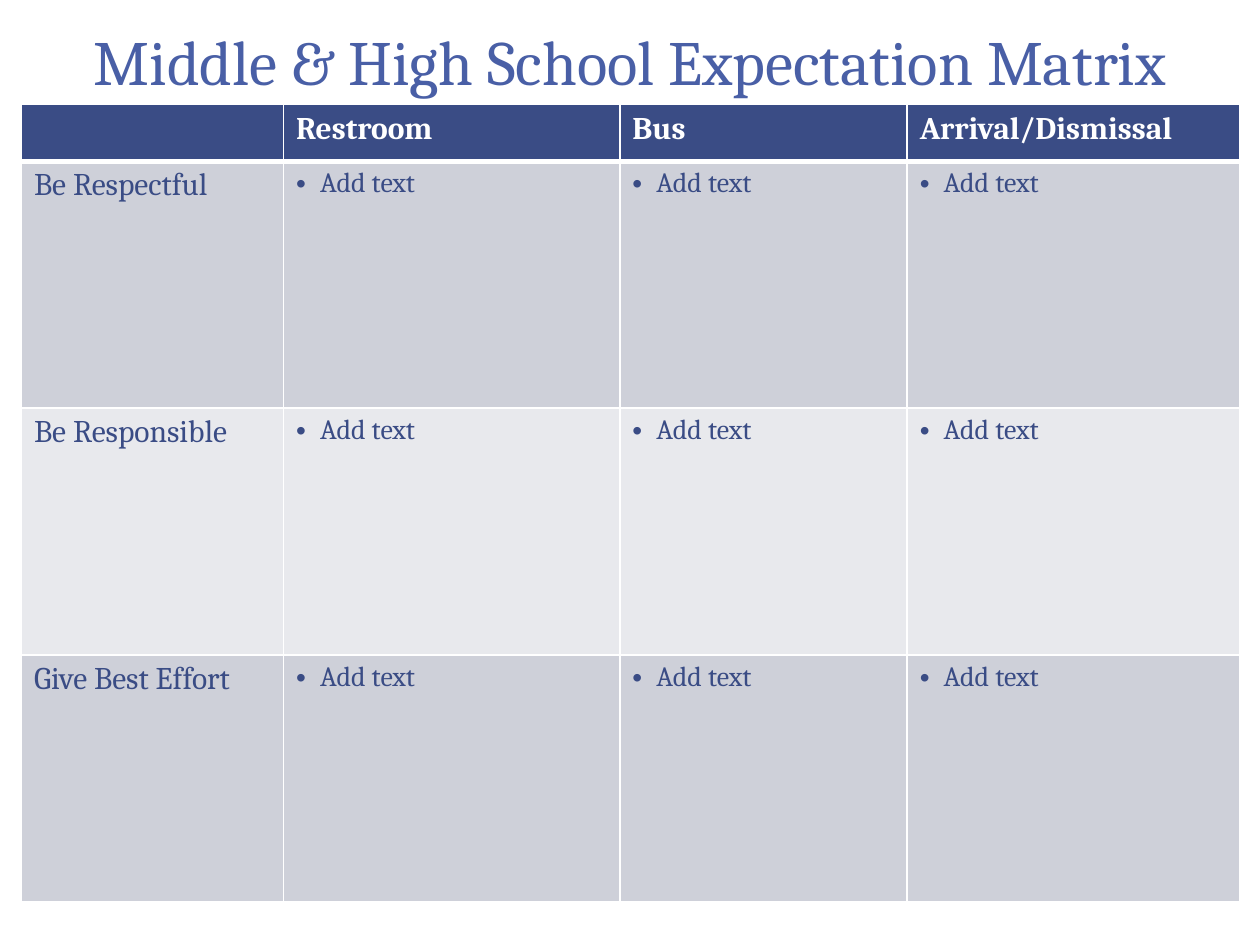
from dataclasses import dataclass

from lxml import etree
from pptx import Presentation
from pptx.dml.color import RGBColor
from pptx.enum.text import MSO_ANCHOR, PP_ALIGN
from pptx.oxml.ns import qn
from pptx.util import Inches, Pt

CENTER = PP_ALIGN.CENTER
LEFT = PP_ALIGN.LEFT
TOP = MSO_ANCHOR.TOP


@dataclass(frozen=True)
class Theme:
    font: str = "Cambria"
    title: str = "495FA6"
    navy: str = "3A4C85"
    white: str = "FFFFFF"
    bands: tuple = ("CED0D9", "E8E9ED")
    title_size: int = 36
    label_size: int = 18
    body_size: int = 16
    rule: int = 1
    header_rule: int = 3


THEME = Theme()

SETTINGS = ["Restroom", "Bus", "Arrival/Dismissal"]
EXPECTATIONS = ["Be Respectful", "Be Responsible", "Give Best Effort"]
PROMPT = "Add text"
COLUMN_WIDTHS = [2.08, 2.67, 2.28, 2.64]
HEADER_HEIGHT = 0.45
BULLET_INDENT = 0.19


def write_text(frame, text, *, size, color, bold=False, align=LEFT, bullet=False):
    paragraph = frame.paragraphs[0]
    paragraph.alignment = align
    if bullet:
        properties = paragraph._p.get_or_add_pPr()
        properties.set("marL", str(Inches(BULLET_INDENT)))
        properties.set("indent", str(-Inches(BULLET_INDENT)))
        etree.SubElement(properties, qn("a:buFont"), typeface="Arial")
        etree.SubElement(properties, qn("a:buChar"), char="•")
    run = paragraph.add_run()
    run.text = text
    run.font.name = THEME.font
    run.font.size = Pt(size)
    run.font.bold = bold
    run.font.color.rgb = RGBColor.from_string(color)


def style_cell(cell, fill, *, top=THEME.rule, bottom=THEME.rule):
    """Give a cell its fill and white borders, with border widths in points."""
    properties = cell._tc.get_or_add_tcPr()
    widths = {"a:lnL": THEME.rule, "a:lnR": THEME.rule, "a:lnT": top, "a:lnB": bottom}
    for tag, width in widths.items():
        line = etree.SubElement(properties, qn(tag), w=str(Pt(width)))
        solid = etree.SubElement(line, qn("a:solidFill"))
        etree.SubElement(solid, qn("a:srgbClr"), val=THEME.white)
    cell.fill.solid()
    cell.fill.fore_color.rgb = RGBColor.from_string(fill)


def add_title(slide, text, left, top, width, height):
    box = slide.shapes.add_textbox(left, top, width, height)
    frame = box.text_frame
    frame.word_wrap = True
    frame.vertical_anchor = TOP
    frame.margin_top = frame.margin_bottom = 0
    write_text(frame, text, size=THEME.title_size, color=THEME.title, align=CENTER)


def add_matrix(slide, left, top, width, height):
    row_count = len(EXPECTATIONS) + 1
    table = slide.shapes.add_table(
        row_count, len(COLUMN_WIDTHS), left, top, width, height
    ).table
    for column, column_width in zip(table.columns, COLUMN_WIDTHS):
        column.width = Inches(column_width)
    header_height = Inches(HEADER_HEIGHT)
    body_height = (height - header_height) // len(EXPECTATIONS)
    for index, row in enumerate(table.rows):
        row.height = body_height if index else header_height

    style_cell(table.cell(0, 0), THEME.navy, bottom=THEME.header_rule)
    for column, setting in enumerate(SETTINGS, start=1):
        cell = table.cell(0, column)
        style_cell(cell, THEME.navy, bottom=THEME.header_rule)
        write_text(cell.text_frame, setting, size=THEME.label_size,
                   color=THEME.white, bold=True)

    for row, expectation in enumerate(EXPECTATIONS, start=1):
        band = THEME.bands[(row - 1) % len(THEME.bands)]
        top_rule = THEME.header_rule if row == 1 else THEME.rule
        for column in range(len(COLUMN_WIDTHS)):
            cell = table.cell(row, column)
            style_cell(cell, band, top=top_rule)
            is_label = column == 0
            write_text(cell.text_frame, expectation if is_label else PROMPT,
                       size=THEME.label_size if is_label else THEME.body_size,
                       color=THEME.navy, bullet=not is_label)


def main():
    presentation = Presentation()
    presentation.slide_width = Inches(10)
    presentation.slide_height = Inches(7.5)
    slide = presentation.slides.add_slide(presentation.slide_layouts[6])
    add_title(slide, "Middle & High School Expectation Matrix",
              Inches(0), Inches(0.18), Inches(10), Inches(1.16))
    add_matrix(slide, Inches(0.17), Inches(0.83), Inches(9.67), Inches(6.33))
    presentation.save("out.pptx")


if __name__ == "__main__":
    main()
